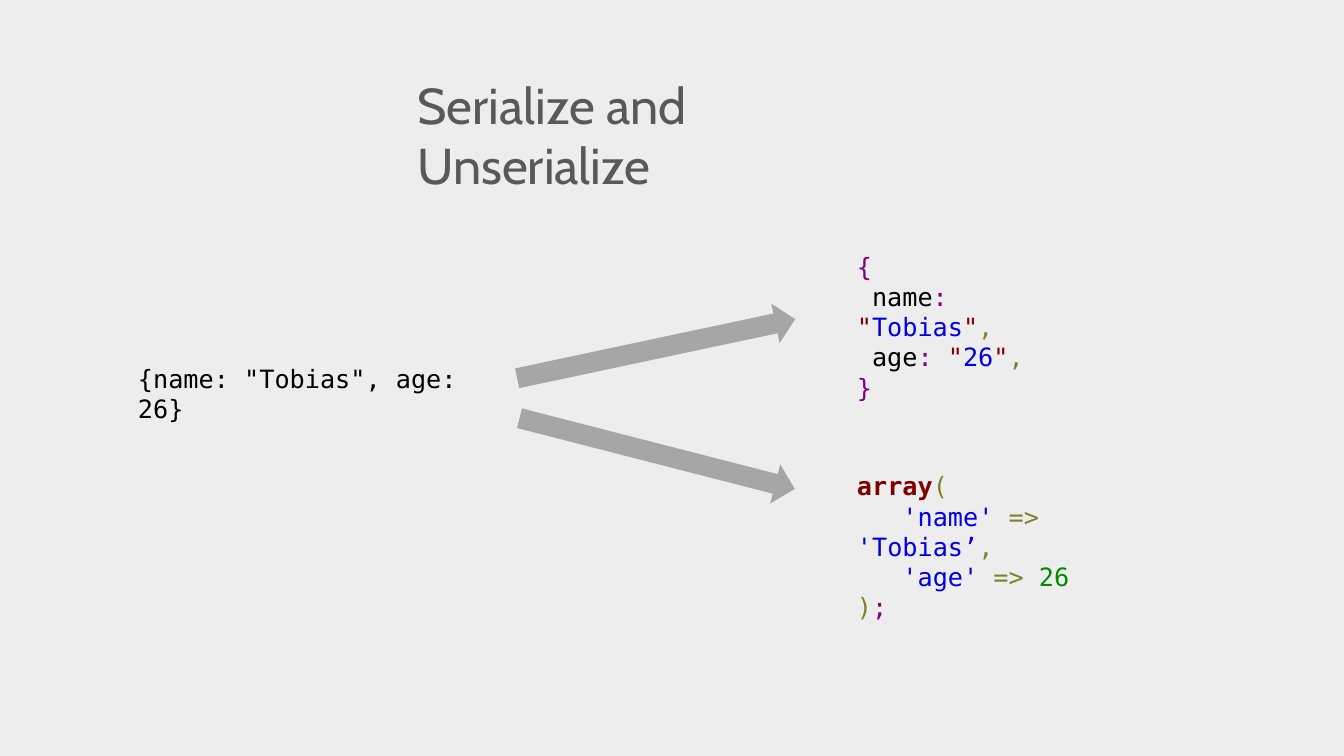
from pptx import Presentation
from pptx.dml.color import RGBColor
from pptx.enum.shapes import MSO_SHAPE
from pptx.enum.text import MSO_ANCHOR, MSO_AUTO_SIZE, PP_ALIGN
from pptx.util import Pt

BACKGROUND, TITLE_GRAY, ARROW_GRAY = "EDEDED", "595959", "A6A6A6"
BLACK, PURPLE, MAROON = "000000", "800080", "800000"
BLUE, OLIVE, GREEN = "0000E6", "808030", "008C00"

JSON_SOURCE = [[('{name: "Tobias", age: 26}', BLACK)]]


def json_field(key, value):
    return [(f" {key}", BLACK), (": ", PURPLE), ('"', MAROON),
            (value, BLUE), ('"', MAROON), (",", OLIVE)]


JSON_OBJECT = [
    [("{", PURPLE)],
    json_field("name", "Tobias"),
    json_field("age", "26"),
    [("}", PURPLE)],
]
PHP_ARRAY = [
    [("array", MAROON, True), ("(", OLIVE)],
    [("   'name' ", BLUE), ("=> ", OLIVE), ("'Tobias’", BLUE), (",", OLIVE)],
    [("   'age' ", BLUE), ("=> ", OLIVE), ("26", GREEN)],
    [(")", OLIVE), (";", PURPLE)],
]


def rgb(value):
    return RGBColor.from_string(value)


def place(sp, box):
    sp.left, sp.top, sp.width, sp.height = (Pt(n) for n in box)


def add_run(p, text, color=BLACK, bold=False, font="DejaVu Sans Mono", size=18):
    r = p.add_run()
    r.text = text
    r.font.name, r.font.size, r.font.bold = font, Pt(size), bold
    r.font.color.rgb = rgb(color)


def prepare_frame(sp):
    tf = sp.text_frame
    tf.word_wrap = True
    tf.auto_size = MSO_AUTO_SIZE.NONE
    tf.vertical_anchor = MSO_ANCHOR.TOP
    return tf


def add_title(slide, box, text):
    sp = slide.shapes.title
    place(sp, box)
    p = prepare_frame(sp).paragraphs[0]
    p.alignment = PP_ALIGN.LEFT
    add_run(p, text, color=TITLE_GRAY, font="Cabin", size=36)


def add_code(slide, box, lines):
    """Set one paragraph per code line, each a list of coloured tokens."""
    sp = slide.shapes.add_textbox(*(Pt(n) for n in box))
    tf = prepare_frame(sp)
    for i, tokens in enumerate(lines):
        p = tf.add_paragraph() if i else tf.paragraphs[0]
        p.line_spacing = Pt(21.6)
        for token in tokens:
            add_run(p, *token)


def add_arrow(slide, box, angle):
    sp = slide.shapes.add_shape(MSO_SHAPE.RIGHT_ARROW, *(Pt(n) for n in box))
    sp.rotation = angle
    sp.shadow.inherit = False
    sp.fill.solid()
    sp.fill.fore_color.rgb = rgb(ARROW_GRAY)
    sp.line.fill.background()


def build_serialize_slide(prs):
    slide = prs.slides.add_slide(prs.slide_layouts[5])
    fill = slide.background.fill
    fill.solid()
    fill.fore_color.rgb = rgb(BACKGROUND)
    add_title(slide, (291, 49, 376, 51), "Serialize and Unserialize")
    add_code(slide, (605, 175.7, 174, 94.3), JSON_OBJECT)
    add_code(slide, (605, 332.6, 234, 116.6), PHP_ARRAY)
    add_code(slide, (91.5, 255.6, 263.5, 29), JSON_SOURCE)
    add_arrow(slide, (367.2, 234.7, 203, 28.8), 348)
    add_arrow(slide, (367.9, 309.6, 203, 28.8), 14.4)


def main():
    prs = Presentation()
    prs.slide_width, prs.slide_height = Pt(960), Pt(540)
    build_serialize_slide(prs)
    prs.save("out.pptx")


if __name__ == "__main__":
    main()
